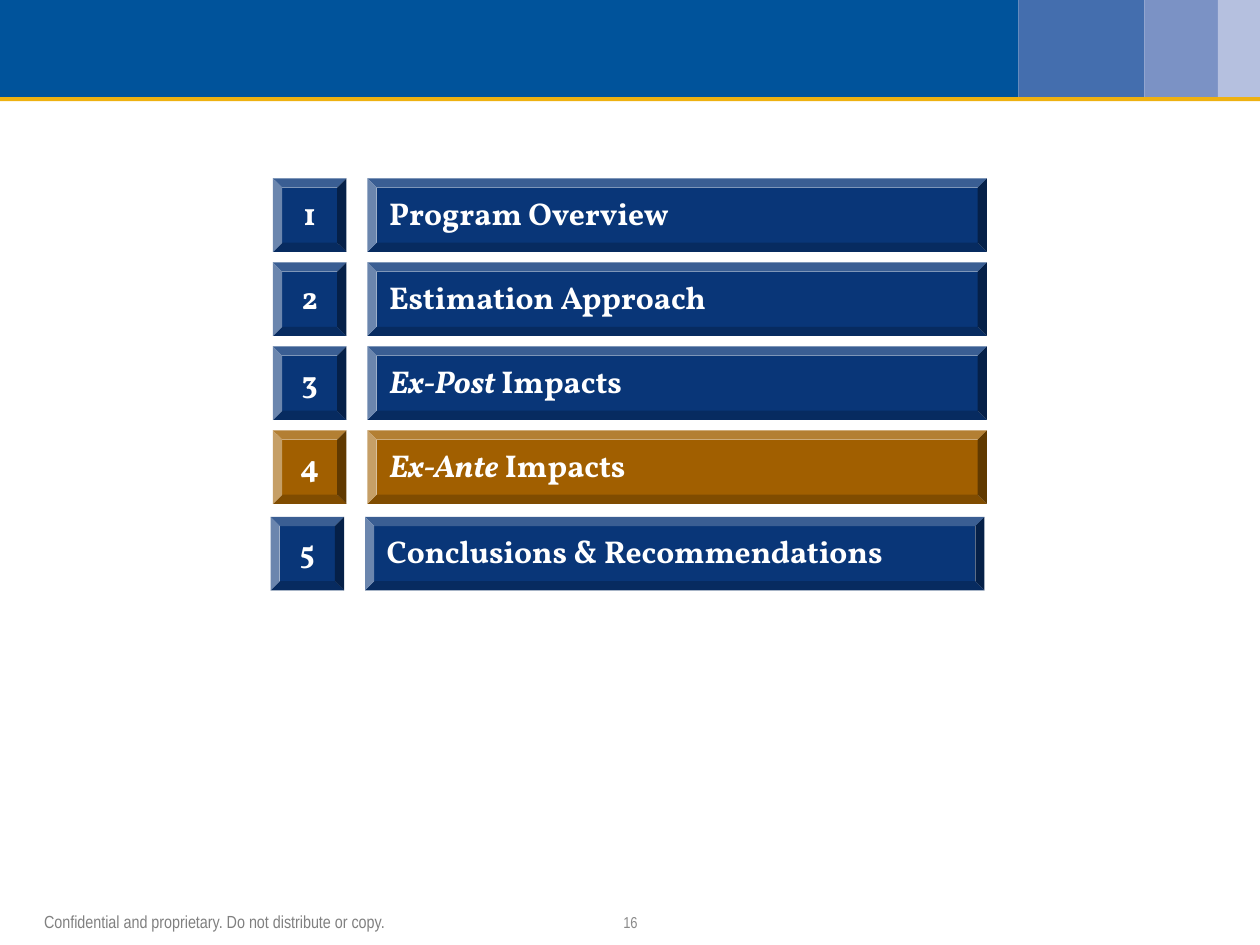
from pptx import Presentation
from pptx.dml.color import RGBColor
from pptx.enum.shapes import MSO_SHAPE
from pptx.enum.text import MSO_ANCHOR, PP_ALIGN
from pptx.util import Pt

NAVY, OCHRE, WHITE = "093678", "A15F00", "FFFFFF"

# Each agenda label is a list of (text, italic) runs
AGENDA = [
    [("Program Overview", False)],
    [("Estimation Approach", False)],
    [("Ex-Post ", True), ("Impacts", False)],
    [("Ex-Ante", True), (" Impacts", False)],
    [("Conclusions & Recommendations", False)],
]
CURRENT = 4


def color(hex_string):
    return RGBColor.from_string(hex_string)


def add_block(shapes, kind, left, top, width, height, fill):
    block = shapes.add_shape(kind, Pt(left), Pt(top), Pt(width), Pt(height))
    block.shadow.inherit = False
    block.fill.solid()
    block.fill.fore_color.rgb = color(fill)
    block.line.fill.background()
    return block


def write(shape, runs, align, side_inset, wrap, size, font_name, text_color, bold=False):
    frame = shape.text_frame
    settings = dict(margin_left=Pt(side_inset), margin_right=Pt(side_inset),
                    margin_top=0, margin_bottom=0, word_wrap=wrap,
                    vertical_anchor=MSO_ANCHOR.MIDDLE)
    for name, value in settings.items():
        setattr(frame, name, value)
    paragraph = frame.paragraphs[0]
    paragraph.alignment = align
    for text, italic in runs:
        run = paragraph.add_run()
        run.text = text
        run.font.color.rgb = color(text_color)
        styles = dict(name=font_name, size=Pt(size), bold=bold, italic=italic)
        for name, value in styles.items():
            setattr(run.font, name, value)
    return paragraph


def add_header(slide, left, top, height):
    # Blue panels side by side
    band = slide.shapes.add_group_shape()
    panels = [(582, "00539B"), (72, "446EAE"), (42, "7B92C5"), (24, "B5C0DF")]
    x = left
    for width, fill in panels:
        add_block(band.shapes, MSO_SHAPE.RECTANGLE, x, top, width, height, fill)
        x += width
    # Gold rule below
    add_block(slide.shapes, MSO_SHAPE.RECTANGLE, left, top + height, x - left, 2.3, "EEB111")


def add_agenda_row(slide, left, top, width, height, number, label):
    fill = OCHRE if number == CURRENT else NAVY
    label_offset = height + 12
    row = slide.shapes.add_group_shape()
    cells = [
        (0, height, [(str(number), False)], PP_ALIGN.CENTER),
        (label_offset, width - label_offset, label, PP_ALIGN.LEFT),
    ]
    for offset, cell_width, runs, align in cells:
        cell = add_block(row.shapes, MSO_SHAPE.BEVEL, left + offset, top,
                         cell_width, height, fill)
        cell.adjustments[0] = 0.125
        paragraph = write(cell, runs, align, 7.2, True, 18, "Vollkorn", WHITE, bold=True)
        paragraph.line_spacing = 0.9


def add_agenda(slide, left, top, width):
    row_height, pitch = 42, 48
    for number, label in enumerate(AGENDA, 1):
        # The last row sits slightly off the grid
        nudge = 1.4 if number == len(AGENDA) else 0
        add_agenda_row(slide, left - nudge, top + (number - 1) * pitch + nudge,
                       width, row_height, number, label)


def add_footer(slide, left, top, height):
    # Confidentiality notice and page number
    notes = [
        (0, 204, "Confidential and proprietary. Do not distribute or copy.",
         PP_ALIGN.LEFT, 10, "808080"),
        (330.4, 9.4, "16", PP_ALIGN.CENTER, 9, "898989"),
    ]
    for offset, width, text, align, size, text_color in notes:
        box = slide.shapes.add_textbox(Pt(left + offset), Pt(top), Pt(width), Pt(height))
        write(box, [(text, False)], align, 0, True, size, "Arial Narrow", text_color)


def main():
    deck = Presentation()
    deck.slide_width, deck.slide_height = Pt(720), Pt(540)
    slide = deck.slides.add_slide(deck.slide_layouts[6])
    add_header(slide, 0, 0, 55.5)
    add_footer(slide, 25.2, 521.3, 10.8)
    add_agenda(slide, 156, 102, 408)
    deck.save("out.pptx")


if __name__ == "__main__":
    main()
